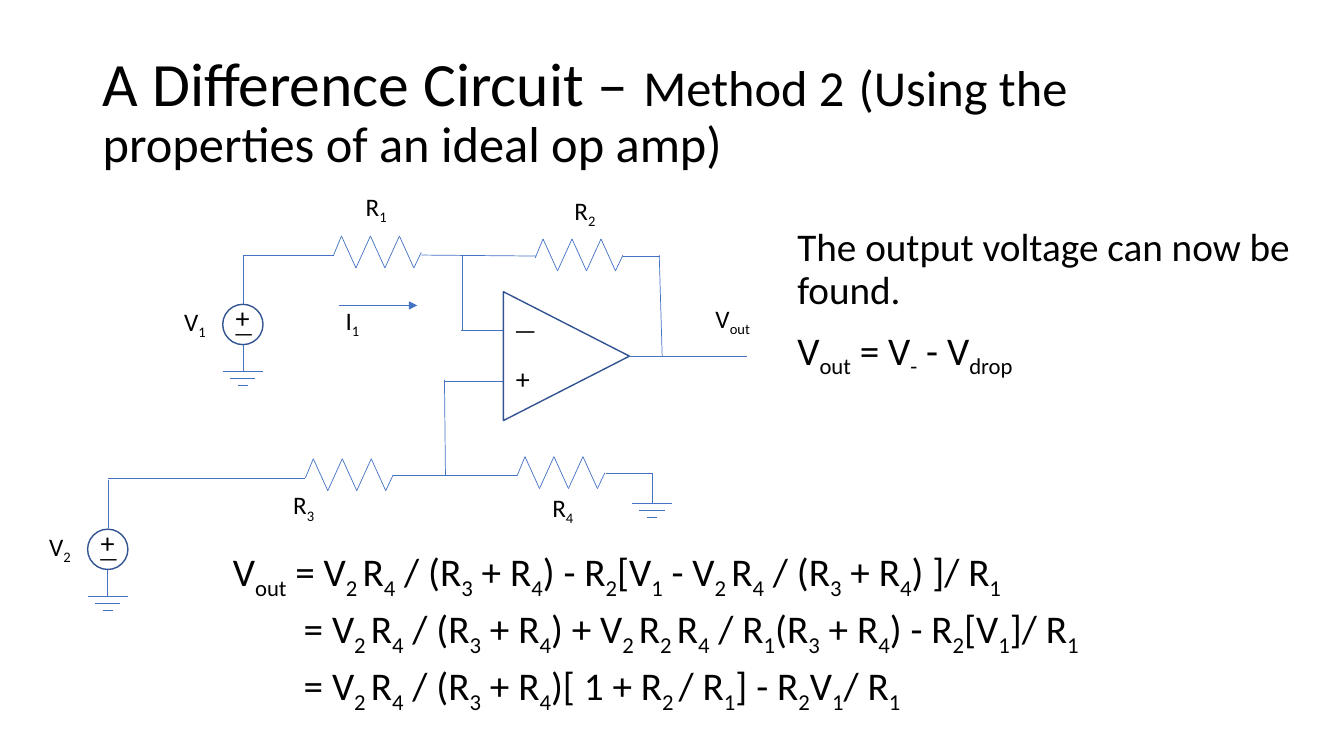
from dataclasses import dataclass
from itertools import pairwise

from lxml import etree
from pptx import Presentation
from pptx.dml.color import RGBColor
from pptx.enum.shapes import MSO_CONNECTOR, MSO_SHAPE
from pptx.enum.text import MSO_ANCHOR, MSO_AUTO_SIZE, PP_ALIGN
from pptx.oxml.ns import qn
from pptx.util import Pt

STRAIGHT = MSO_CONNECTOR.STRAIGHT
TRIANGLE, OVAL = MSO_SHAPE.ISOSCELES_TRIANGLE, MSO_SHAPE.OVAL
LEFT, TOP, MIDDLE = PP_ALIGN.LEFT, MSO_ANCHOR.TOP, MSO_ANCHOR.MIDDLE
NO_FIT, GROW = MSO_AUTO_SIZE.NONE, MSO_AUTO_SIZE.SHAPE_TO_FIT_TEXT
TWO_CONTENT = 3


@dataclass(frozen=True)
class Theme:
    font: str = "Calibri"
    ink: RGBColor = RGBColor(0x00, 0x00, 0x00)
    wire: RGBColor = RGBColor(0x44, 0x72, 0xC4)
    outline: RGBColor = RGBColor(0x32, 0x54, 0x91)
    title: int = 44
    subtitle: int = 36
    body: int = 28
    plus: int = 20
    label: int = 18
    minus: int = 16


THEME = Theme()

TITLE = [
    ("A Difference Circuit – ", THEME.title),
    ("Method 2", THEME.subtitle),
    (" ", THEME.title),
    ("(Using the properties of an ideal op amp)", THEME.subtitle),
]
# Text between underscores is subscript.
FINDING = ["The output voltage can now be found.", "V_out_ = V_-_ - V_drop_"]
V_PLUS = "V_2 _R_4_ / (R_3_ + R_4_)"
DERIVATION = [
    f"V_out_ = {V_PLUS} - R_2_[V_1_ - {V_PLUS} ]/ R_1_",
    f"= {V_PLUS} + V_2 _R_2 _R_4_ / R_1_(R_3_ + R_4_) - R_2_[V_1_]/ R_1_",
    f"= {V_PLUS}[ 1 + R_2 _/ R_1_] - R_2_V_1_/ R_1_",
]


def apply(obj, values):
    for name, value in values.items():
        setattr(obj, name, value)


def place(sp, x, y, w, h):
    apply(sp, {"left": Pt(x), "top": Pt(y), "width": Pt(w), "height": Pt(h)})


def add_run(p, text, size):
    r = p.add_run()
    r.text = text
    apply(r.font, {"name": THEME.font, "size": Pt(size)})
    r.font.color.rgb = THEME.ink
    return r


def add_formula(p, text, size):
    """Add runs, with the parts between underscores as subscripts."""
    for i, part in enumerate(text.split("_")):
        if part:
            r = add_run(p, part, size)
            if i % 2:
                r.font._element.set("baseline", "-25000")


def label(slide, text, x, y, size=THEME.label, width=41):
    sp = slide.shapes.add_textbox(Pt(x), Pt(y), Pt(width), Pt(size * 1.22 + 7.2))
    apply(sp.text_frame, {"word_wrap": True, "auto_size": GROW})
    add_formula(sp.text_frame.paragraphs[0], text, size)


def wire(slide, x1, y1, x2, y2, arrow=False):
    sp = slide.shapes.add_connector(STRAIGHT, Pt(x1), Pt(y1), Pt(x2), Pt(y2))
    sp.line.color.rgb = THEME.wire
    sp.line.width = Pt(0.5)
    if arrow:
        etree.SubElement(sp.line._get_or_add_ln(), qn("a:tailEnd"), type="triangle")
    etree.SubElement(sp._element.spPr, qn("a:effectLst"))


def outline(slide, kind, x, y, w, h, rotation=0):
    sp = slide.shapes.add_shape(kind, Pt(x), Pt(y), Pt(w), Pt(h))
    sp.rotation = rotation
    sp.shadow.inherit = False
    sp.fill.background()
    sp.line.color.rgb = THEME.outline
    sp.line.width = Pt(1)


def resistor(slide, name, x, y, dx, dy):
    """Draw a zigzag from its left end, with its name offset by dx, dy."""
    teeth = [(x + 5.6 + 10.35 * i, y + (9.2 if i % 2 else -13.6)) for i in range(6)]
    for start, end in pairwise([(x, y), *teeth, (x + 62.6, y - 2)]):
        wire(slide, *start, *end)
    label(slide, name, x + dx, y + dy)


def ground(slide, x, y, lead):
    wire(slide, x, y - lead, x, y)
    for i, half in enumerate((14.4, 9, 3.6)):
        wire(slide, x - half, y + 5 * i, x + half, y + 5 * i)


def voltage_source(slide, name, x, y, size=28.8):
    outline(slide, OVAL, x, y, size, size)
    label(slide, "+", x + 2.2, y - 6.5, THEME.plus, 24.5)
    label(slide, "—", x + 0.7, y + 7.2, THEME.minus, 24.5)
    label(slide, name, x - 34.6, y - 2.2)
    wire(slide, x + size / 2 + 0.5, y - 0.5, x + size / 2 + 0.5, y - 35.2)
    ground(slide, x + size / 2, y + 48.2, 19.4)


def op_amp(slide, x, y, w=90, h=92):
    outline(slide, TRIANGLE, x + (w - h) / 2, y + (h - w) / 2, h, w, 90)
    label(slide, "—", x + 0.4, y + 12.6, THEME.label, 24.5)
    label(slide, "+", x + 1.8, y + 46.5, THEME.plus, 24.5)
    wire(slide, x - 30.6, y + 27.8, x, y + 27.8)
    wire(slide, x - 41.4, y + 63.8, x, y + 63.8)
    wire(slide, x + w, y + 46.4, x + 174, y + 46.4)
    label(slide, "V_out_", x + 144.4, y + 4.7)


def circuit(slide, x, y):
    op_amp(slide, x + 331.6, y + 75.4)
    for name, rx, ry, dx, dy in (
        ("R_1_", 210.3, 49.2, 15.8, -49),
        ("R_2_", 354.3, 51.3, 20.9, -48.2),
        ("R_3_", 190.2, 208.3, -15.8, 5),
        ("R_4_", 341.4, 206.8, 18, 8),
    ):
        resistor(slide, name, x + rx, y + ry, dx, dy)
    voltage_source(slide, "V_1_", x + 131.1, y + 84.4)
    voltage_source(slide, "V_2_", x + 34.6, y + 245)
    ground(slide, x + 437.8, y + 226.3, 21.6)
    for x1, y1, x2, y2 in (
        (145.5, 49.2, 190.2, 49.2),
        (177.2, 49.2, 210.3, 49.2),
        (273, 49.2, 355, 49.9),
        (302.5, 103.2, 302.5, 49.2),
        (417, 49.9, 443.6, 49.9),
        (445, 121.2, 442.9, 49.2),
        (290.2, 206.8, 289.5, 138.4),
        (49, 209, 190.2, 209),
        (252.8, 206.8, 341.4, 206.8),
        (404.7, 205.4, 437.8, 205.4),
    ):
        wire(slide, x + x1, y + y1, x + x2, y + y2)
    wire(slide, x + 213.9, y + 85.2, x + 270.1, y + 85.2, arrow=True)
    label(slide, "I_1_", x + 211.8, y + 81.6)


def heading(sp, *box):
    place(sp, *box)
    tf = sp.text_frame
    apply(tf, {"word_wrap": True, "auto_size": NO_FIT, "vertical_anchor": MIDDLE})
    p = tf.paragraphs[0]
    apply(p, {"alignment": LEFT, "line_spacing": 0.9})
    for text, size in TITLE:
        add_run(p, text, size)


def formula_list(sp, lines, spacing, *box):
    """Fill a body placeholder; lines that open with = are indented."""
    place(sp, *box)
    tf = sp.text_frame
    apply(tf, {"word_wrap": True, "auto_size": NO_FIT, "vertical_anchor": TOP})
    for i, text in enumerate(lines):
        p = tf.add_paragraph() if i else tf.paragraphs[0]
        apply(p, {"alignment": LEFT, "line_spacing": spacing, "space_before": Pt(10)})
        pPr = p._p.get_or_add_pPr()
        pPr.set("marL", str(Pt(50.6) if text.startswith("=") else 0))
        pPr.set("indent", "0")
        etree.SubElement(pPr, qn("a:buNone"))
        add_formula(p, text, THEME.body)


def main():
    prs = Presentation()
    prs.slide_width, prs.slide_height = Pt(960), Pt(540)
    slide = prs.slides.add_slide(prs.slide_layouts[TWO_CONTENT])
    title, finding, derivation = slide.placeholders
    heading(title, 66.2, 28.8, 828, 104.4)
    circuit(slide, 28, 133)
    formula_list(finding, FINDING, 0.9, 562.3, 159.1, 379.4, 127.4)
    formula_list(derivation, DERIVATION, 0.8, 159.1, 391, 716.4, 110.2)
    prs.save("out.pptx")


if __name__ == "__main__":
    main()
